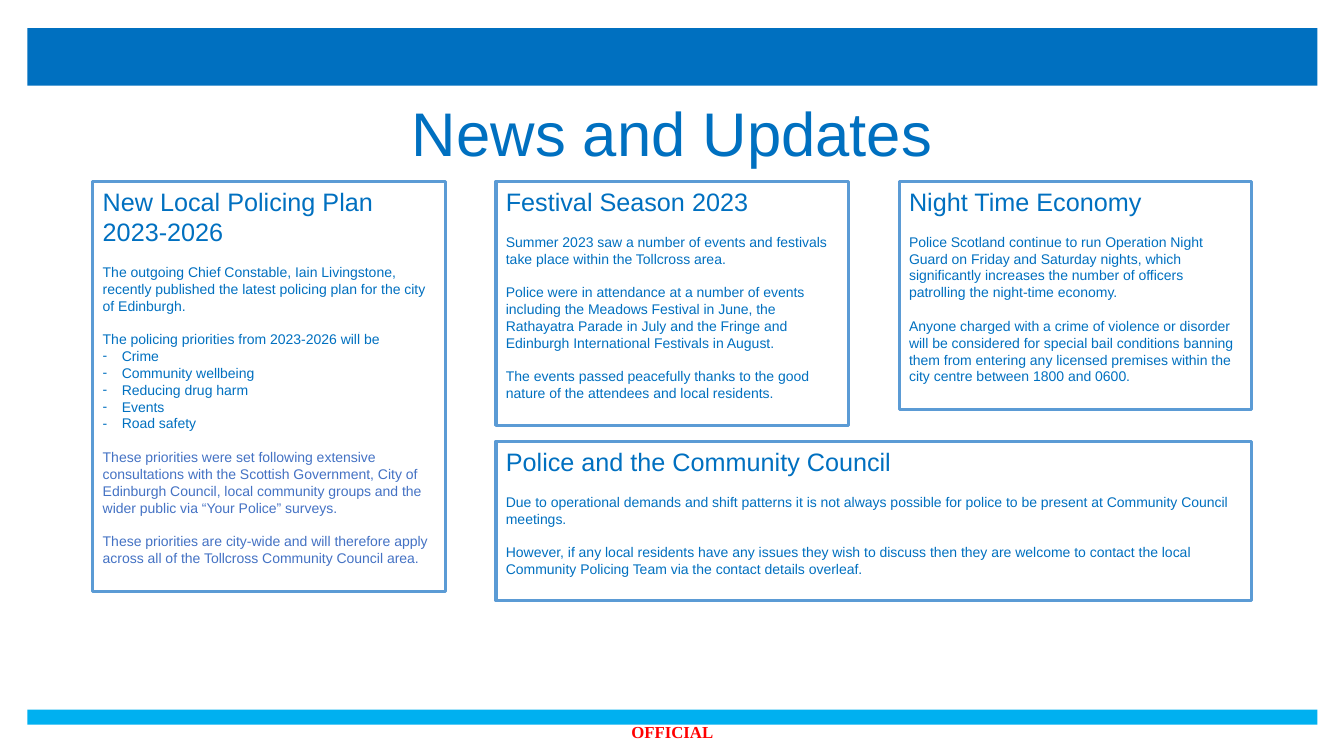
from dataclasses import dataclass

from lxml import etree
from pptx import Presentation
from pptx import util as u
from pptx.dml.color import RGBColor
from pptx.enum import shapes, text
from pptx.oxml.ns import qn


@dataclass(frozen=True)
class Theme:
    blue: str = "0070C0"
    sky: str = "00B0F0"
    border: str = "5B9BD5"
    note: str = "4472C4"
    red: str = "FF0000"
    sans: str = "Arial"
    serif: str = "Times New Roman"
    title: float = 44
    heading: float = 18
    body: float = 10
    marking: float = 12
    gap: float = 12


@dataclass(frozen=True)
class Para:
    words: str
    color: str = Theme.blue
    bullet: bool = False
    gap: bool = True


@dataclass(frozen=True)
class Card:
    column: int
    top: float
    height: float
    heading: str
    paras: tuple[Para, ...]
    span: int = 1


T = Theme()
LEFT, PITCH, CARD_WIDTH = 2.34, 10.16, 8.89  # card grid, cm

PRIORITIES = ("Crime", "Community wellbeing", "Reducing drug harm", "Events", "Road safety")

CARDS = (
    Card(0, 4.57, 10.34, "New Local Policing Plan 2023-2026", (
        Para("The outgoing Chief Constable, Iain Livingstone, recently published the latest "
             "policing plan for the city of Edinburgh."),
        Para("The policing priorities from 2023-2026 will be"),
        *(Para(name, bullet=True, gap=False) for name in PRIORITIES),
        Para("These priorities were set following extensive consultations with the Scottish "
             "Government, City of Edinburgh Council, local community groups and the wider "
             "public via “Your Police” surveys.", T.note),
        Para("These priorities are city-wide and will therefore apply across all of the "
             "Tollcross Community Council area.", T.note),
    )),
    Card(1, 4.57, 6.15, "Festival Season 2023", (
        Para("Summer 2023 saw a number of events and festivals take place within the "
             "Tollcross area."),
        Para("Police were in attendance at a number of events including the Meadows Festival "
             "in June, the Rathayatra Parade in July and the Fringe and Edinburgh "
             "International Festivals in August."),
        Para("The events passed peacefully thanks to the good nature of the attendees and "
             "local residents."),
    )),
    Card(2, 4.57, 5.74, "Night Time Economy", (
        Para("Police Scotland continue to run Operation Night Guard on Friday and Saturday "
             "nights, which significantly increases the number of officers patrolling the "
             "night-time economy."),
        Para("Anyone charged with a crime of violence or disorder will be considered for "
             "special bail conditions banning them from entering any licensed premises "
             "within the city centre between 1800 and 0600."),
    )),
    Card(1, 11.12, 4.02, "Police and the Community Council", (
        Para("Due to operational demands and shift patterns it is not always possible for "
             "police to be present at Community Council meetings."),
        Para("However, if any local residents have any issues they wish to discuss then they "
             "are welcome to contact the local Community Policing Team via the contact "
             "details overleaf."),
    ), span=2),
)


def add_rect(s, left: float, top: float, width: float, height: float,
             fill: str | None = None, line: str | None = None):
    sp = s.shapes.add_shape(shapes.MSO_SHAPE.RECTANGLE,
                            u.Cm(left), u.Cm(top), u.Cm(width), u.Cm(height))
    sp.shadow.inherit = False
    if fill:
        sp.fill.solid()
        sp.fill.fore_color.rgb = RGBColor.from_string(fill)
    else:
        sp.fill.background()
    if line:
        sp.line.color.rgb = RGBColor.from_string(line)
        sp.line.width = u.Pt(2.25)
    else:
        sp.line.fill.background()
    return sp


def add_text(tf, words: str, *, size: float, color: str = T.blue, font: str = T.sans,
             bold: bool = False, align=text.PP_ALIGN.LEFT, before: float = 0,
             spacing: float = 1.0, bullet: bool = False) -> None:
    p = tf.paragraphs[0] if not tf.paragraphs[0].runs else tf.add_paragraph()
    p.alignment = align
    p.line_spacing = spacing
    p.space_before = u.Pt(before)
    if bullet:
        pPr = p._p.get_or_add_pPr()
        pPr.set("marL", str(u.Cm(0.48)))
        pPr.set("indent", str(u.Cm(-0.48)))
        etree.SubElement(pPr, qn("a:buFont")).set("typeface", font)
        etree.SubElement(pPr, qn("a:buChar")).set("char", "-")
    r = p.add_run()
    r.text = words
    r.font.name, r.font.size, r.font.bold = font, u.Pt(size), bold
    r.font.color.rgb = RGBColor.from_string(color)


def add_label(s, left: float, top: float, width: float, height: float,
              words: str, **fmt) -> None:
    tf = s.shapes.add_textbox(u.Cm(left), u.Cm(top), u.Cm(width), u.Cm(height)).text_frame
    tf.word_wrap = True
    tf.vertical_anchor = text.MSO_ANCHOR.MIDDLE
    add_text(tf, words, align=text.PP_ALIGN.CENTER, **fmt)


def add_card(s, card: Card) -> None:
    width = CARD_WIDTH + (card.span - 1) * PITCH
    sp = add_rect(s, LEFT + card.column * PITCH, card.top, width, card.height, line=T.border)
    tf = sp.text_frame
    tf.word_wrap = True
    tf.vertical_anchor = text.MSO_ANCHOR.TOP
    add_text(tf, card.heading, size=T.heading)
    for para in card.paras:
        add_text(tf, para.words, size=T.body, color=para.color, bullet=para.bullet,
                 before=T.gap if para.gap else 0)


def main() -> None:
    prs = Presentation()
    prs.slide_width, prs.slide_height = u.Cm(33.87), u.Cm(19.05)
    s = prs.slides.add_slide(prs.slide_layouts[6])

    # Header and footer bands
    add_rect(s, 0.69, 0.71, 32.51, 1.45, fill=T.blue)
    add_rect(s, 0.69, 17.88, 32.51, 0.38, fill=T.sky)

    # Title and protective marking
    add_label(s, 2.34, 2.29, 29.21, 2.29, "News and Updates", size=T.title, spacing=0.9)
    add_label(s, 11.23, 17.93, 11.43, 1.02, "OFFICIAL", size=T.marking, color=T.red,
              font=T.serif, bold=True)

    # News cards
    for card in CARDS:
        add_card(s, card)

    prs.save("out.pptx")


if __name__ == "__main__":
    main()
